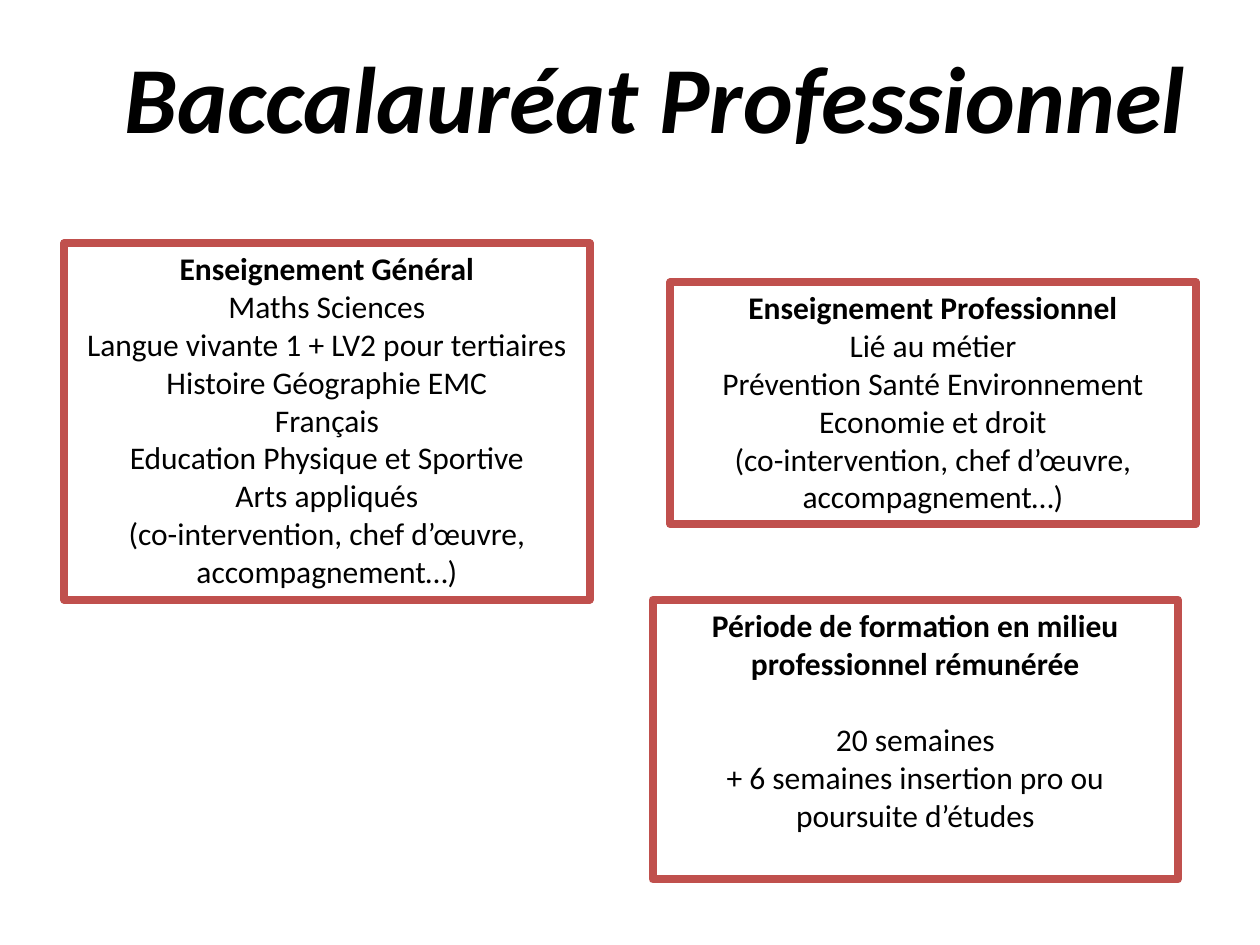
from pptx import Presentation
from pptx.dml.color import RGBColor
from pptx.enum.shapes import MSO_SHAPE
from pptx.enum.text import MSO_ANCHOR, PP_ALIGN
from pptx.oxml.ns import qn
from pptx.util import Inches, Pt
from lxml.etree import SubElement

BLACK = RGBColor(0x00, 0x00, 0x00)
WHITE = RGBColor(0xFF, 0xFF, 0xFF)
RED = RGBColor(0xC0, 0x50, 0x4D)
FONT = "Calibri"
CARD_WIDTH = 4.17
SHARED_TOPICS = "(co-intervention, chef d’œuvre, accompagnement…)"

# left, top, height, gap under the heading in points, heading, lines
CARDS = [
    (0.51, 1.93, 2.83, 0, "Enseignement Général", [
        "Maths Sciences",
        "Langue vivante 1 + LV2 pour tertiaires",
        "Histoire Géographie EMC",
        "Français",
        "Education Physique et Sportive",
        "Arts appliqués",
        SHARED_TOPICS,
    ]),
    (5.32, 2.24, 1.92, 0, "Enseignement Professionnel", [
        "Lié au métier",
        "Prévention Santé Environnement",
        "Economie et droit",
        SHARED_TOPICS,
    ]),
    (5.18, 4.76, 2.22, 22, "Période de formation en milieu professionnel rémunérée", [
        "20 semaines",
        "+ 6 semaines insertion pro ou poursuite d’études",
    ]),
]


def style_paragraph(para, size, bold, italic=False):
    para.alignment = PP_ALIGN.CENTER
    for span in para.runs:
        span.font.name = FONT
        span.font.size = Pt(size)
        span.font.bold = bold
        span.font.italic = italic
        span.font.color.rgb = BLACK


def add_title(page, left, top, width, height):
    box = page.shapes.add_textbox(Inches(left), Inches(top), Inches(width), Inches(height))
    frame = box.text_frame
    frame.word_wrap = True
    frame.text = "Baccalauréat Professionnel"
    style_paragraph(frame.paragraphs[0], 54, bold=True, italic=True)


def add_card(page, left, top, height, heading_gap, heading, lines):
    """Add a red-framed box with a bold heading above plain centred lines."""
    card = page.shapes.add_shape(
        MSO_SHAPE.RECTANGLE, Inches(left), Inches(top), Inches(CARD_WIDTH), Inches(height))
    card.shadow.inherit = False
    card.fill.solid()
    card.fill.fore_color.rgb = WHITE
    card.line.color.rgb = RED
    card.line.width = Pt(4.5)
    SubElement(card.element.spPr.find(qn("a:ln")), qn("a:round"))

    frame = card.text_frame
    frame.word_wrap = True
    frame.vertical_anchor = MSO_ANCHOR.TOP
    frame.text = "\n".join([heading, *lines])
    for index, para in enumerate(frame.paragraphs):
        style_paragraph(para, 18, bold=index == 0)
    frame.paragraphs[1].space_before = Pt(heading_gap)


def main():
    deck = Presentation()
    deck.slide_width = Inches(10)
    deck.slide_height = Inches(7.5)
    page = deck.slides.add_slide(deck.slide_layouts[6])
    add_title(page, 0.83, 0.26, 8.74, 1.01)
    for card in CARDS:
        add_card(page, *card)
    deck.save("out.pptx")


if __name__ == "__main__":
    main()
